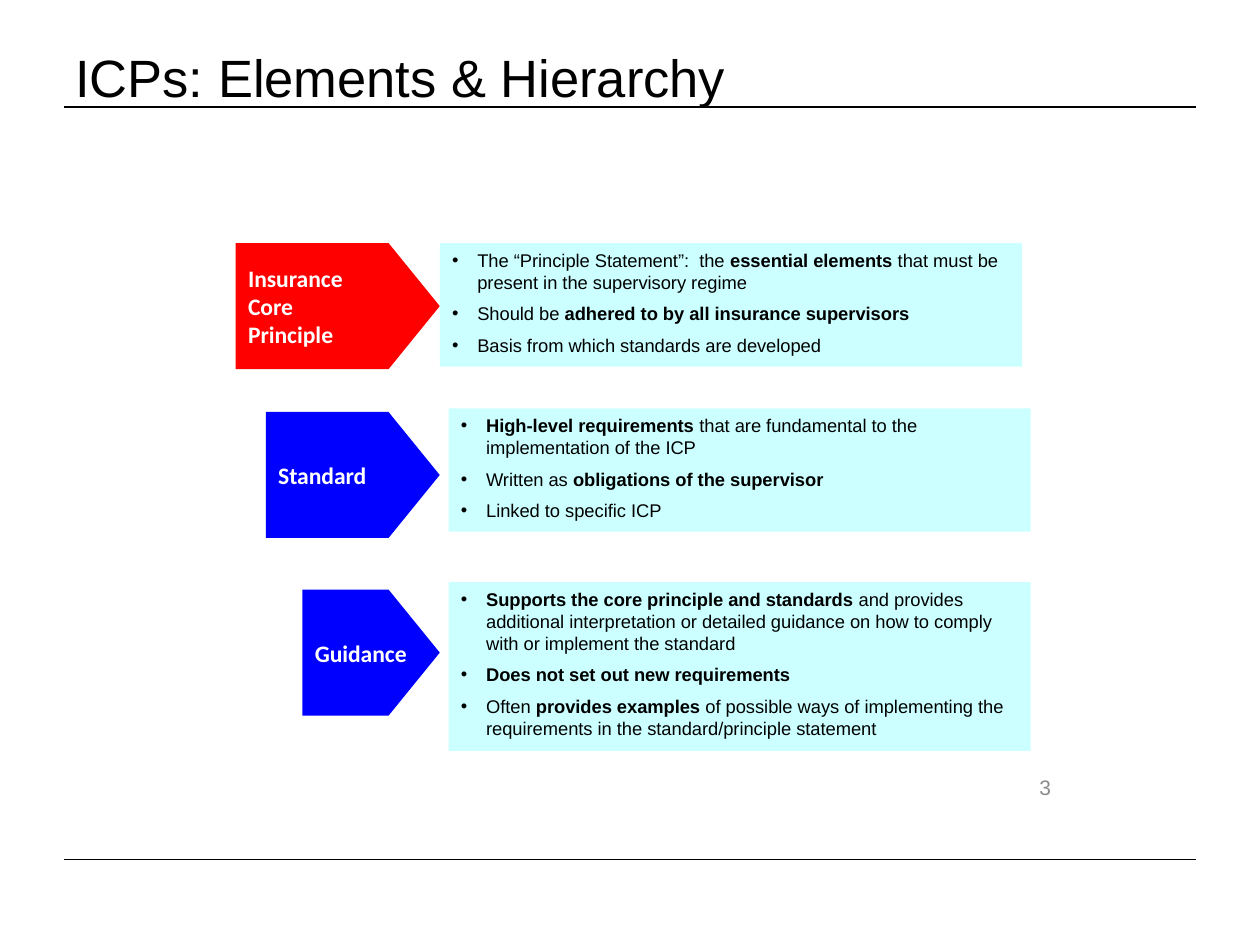
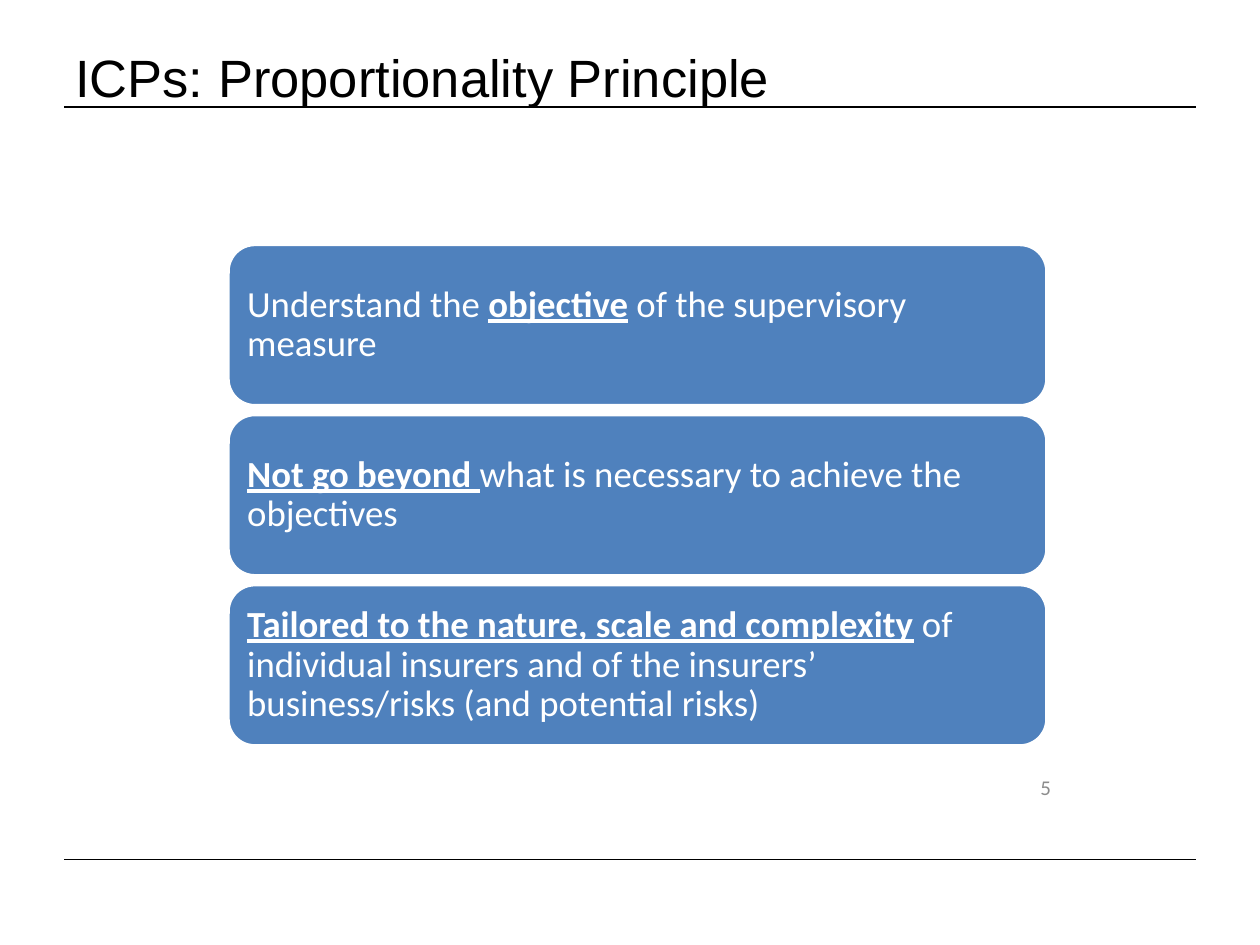
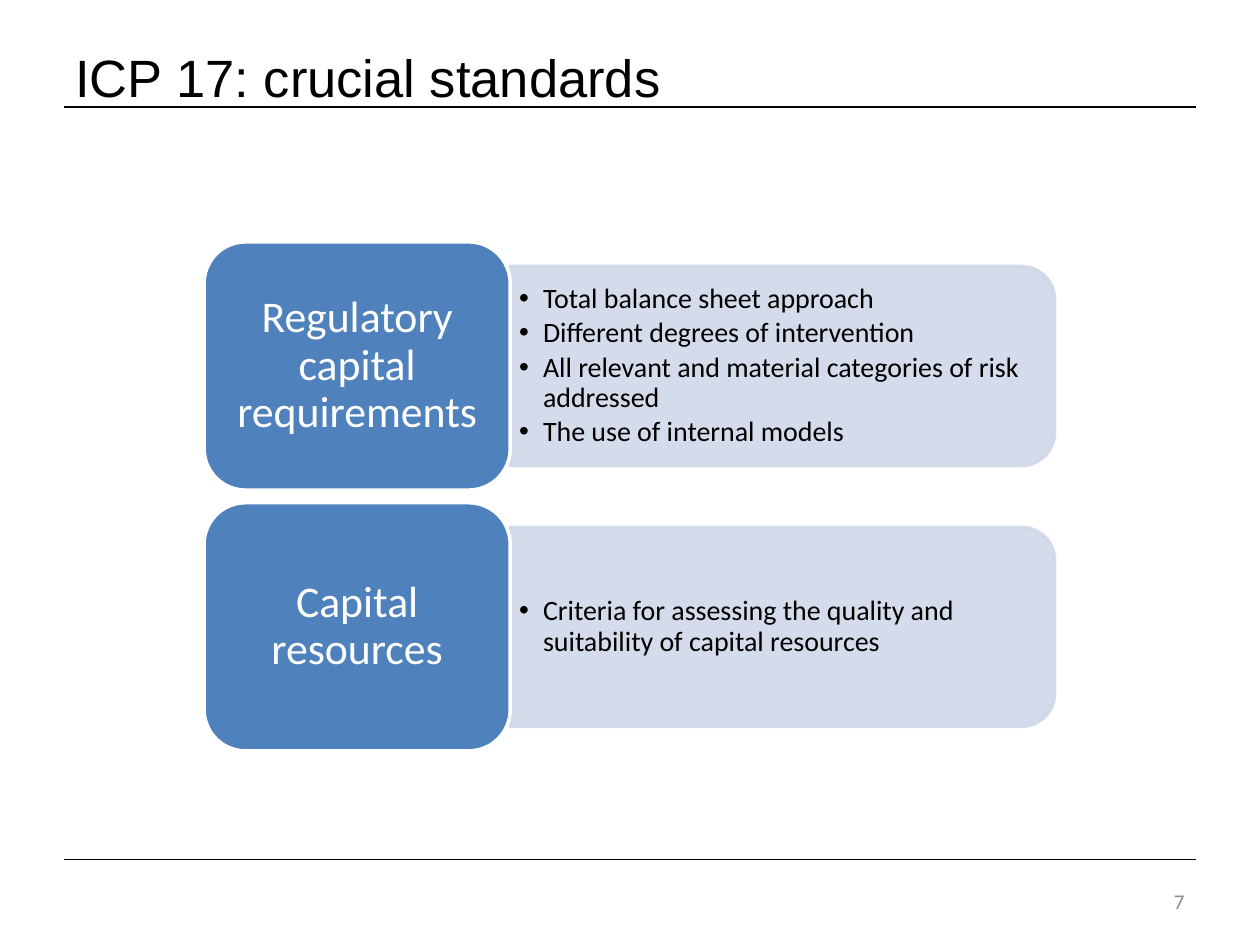
from lxml import etree
from pptx import Presentation
from pptx.dml.color import RGBColor
from pptx.enum.shapes import MSO_CONNECTOR, MSO_SHAPE
from pptx.enum.text import MSO_ANCHOR, PP_ALIGN
from pptx.oxml.ns import qn
from pptx.util import Inches, Pt

TOP, MIDDLE = MSO_ANCHOR.TOP, MSO_ANCHOR.MIDDLE
LEFT, CENTER, RIGHT = PP_ALIGN.LEFT, PP_ALIGN.CENTER, PP_ALIGN.RIGHT
RECTANGLE, PENTAGON = MSO_SHAPE.RECTANGLE, MSO_SHAPE.PENTAGON
ROUNDED = MSO_SHAPE.ROUNDED_RECTANGLE
TWO_ROUNDED = MSO_SHAPE.ROUND_2_SAME_RECTANGLE
STRAIGHT = MSO_CONNECTOR.STRAIGHT

BLACK, WHITE, GREY = "000000", "FFFFFF", "8C8C8C"
RED, BLUE, AQUA = "FF0000", "0000FF", "CCFFFF"
STEEL, MIST = "4F81BD", "D0D8E8"
RULE_TOPS = (0.85, 6.82)
MID_NUMBER, CORNER_NUMBER = (8, 6.06, 0.44, 0.38), (7.17, 6.95, 2.33, 0.4)

# Asterisks enclose the emphasised words.
HIERARCHY = [
    {"level": ["Insurance", "Core", "Principle"], "color": RED,
     "arrow": (1.87, 1.93), "card": (3.49, 1.93, 4.62, 0.98),
     "points": [
         "The “Principle Statement”:  the *essential elements* that must be present in the supervisory regime",
         "Should be *adhered to by all insurance supervisors*",
         "Basis from which standards are developed"]},
    {"level": ["Standard"], "color": BLUE,
     "arrow": (2.11, 3.27), "card": (3.56, 3.24, 4.62, 0.98),
     "points": [
         "*High-level requirements* that are fundamental to the implementation of the ICP",
         "Written as *obligations of the supervisor*",
         "Linked to specific ICP"]},
    {"level": ["Guidance"], "color": BLUE,
     "arrow": (2.4, 4.68), "card": (3.56, 4.62, 4.62, 1.34),
     "points": [
         "*Supports the core principle and standards* and provides additional interpretation or detailed guidance on how to comply with or implement the standard",
         "*Does not set out new requirements*",
         "Often *provides examples* of possible ways of implementing the requirements in the standard/principle statement"]},
]
PROPORTIONALITY = [
    "Understand the *objective* of the supervisory measure",
    "*Not go beyond *what is necessary to achieve the objectives",
    "*Tailored to the nature, scale and complexity* of individual insurers and of the insurers’ business/risks (and potential risks)",
]
STANDARDS = [
    ("Regulatory capital requirements", [
        "Total balance sheet approach",
        "Different degrees of intervention",
        "All relevant and material categories of risk addressed",
        "The use of internal models"]),
    ("Capital resources", [
        "Criteria for assessing the quality and suitability of capital resources"]),
]


def rgb(color):
    return RGBColor.from_string(color)


def add_box(slide, kind, box, fill, line=None):
    shape = slide.shapes.add_shape(kind, *map(Inches, box))
    shape.shadow.inherit = False
    shape.fill.solid()
    shape.fill.fore_color.rgb = rgb(fill)
    if line:
        shape.line.color.rgb = rgb(line)
        shape.line.width = Pt(2)
    else:
        shape.line.fill.background()
    return shape


def add_bullet(paragraph, indent):
    properties = paragraph._p.get_or_add_pPr()
    properties.set("marL", str(Inches(indent)))
    properties.set("indent", str(-Inches(indent)))
    etree.SubElement(properties, qn("a:buFont")).set("typeface", "Arial")
    etree.SubElement(properties, qn("a:buChar")).set("char", "•")


def write(shape, paragraphs, size, font, color, align=LEFT, anchor=MIDDLE, insets=(0.1, 0.05),
          wrap=True, bold=False, underline=False, bullet=None, after=0, spacing=None):
    """Fill a shape with text; underline also applies to emphasised words only."""
    frame = shape.text_frame
    frame.word_wrap = wrap
    frame.vertical_anchor = anchor
    frame.margin_left = frame.margin_right = Inches(insets[0])
    frame.margin_top = frame.margin_bottom = Inches(insets[1])
    for index, text in enumerate(paragraphs):
        paragraph = frame.paragraphs[0] if index == 0 else frame.add_paragraph()
        paragraph.alignment = align
        paragraph.space_after = Pt(after)
        if spacing:
            paragraph.line_spacing = spacing
        if bullet:
            add_bullet(paragraph, bullet)
        for part, words in enumerate(text.split("*")):
            if not words:
                continue
            emphasised = part % 2 == 1
            run = paragraph.add_run()
            run.text = words
            run.font.size, run.font.name = Pt(size), font
            run.font.color.rgb = rgb(color)
            run.font.bold = bold or emphasised
            run.font.underline = underline and emphasised


def add_text(slide, box, paragraphs, *style, **options):
    write(slide.shapes.add_textbox(*map(Inches, box)), paragraphs, *style, **options)


def add_base(deck, title, number, number_box, number_font="Calibri"):
    """Add a slide with its rules, title and page number."""
    slide = deck.slides.add_slide(deck.slide_layouts[6])
    for top in RULE_TOPS:
        rule = slide.shapes.add_connector(
            STRAIGHT, Inches(0.51), Inches(top), Inches(9.49), Inches(top))
        rule.line.color.rgb = rgb(BLACK)
        rule.line.width = Pt(0.75)
        etree.SubElement(rule._element.spPr, qn("a:effectLst"))
    add_text(slide, (0.5, 0.3, 9, 0.61), [title], 30, "Arial", BLACK)
    add_text(slide, number_box, [number], 12, number_font, GREY, align=RIGHT)
    return slide


def build_hierarchy(deck):
    slide = add_base(deck, "ICPs: Elements & Hierarchy", "3", MID_NUMBER, "Arial")
    tip = 3.49
    for row in HIERARCHY:
        left, top = row["arrow"]
        arrow = add_box(slide, PENTAGON, (left, top, tip - left, 1), row["color"])
        arrow.adjustments[0] = 0.406
        write(arrow, row["level"], 13.5, "Calibri", WHITE, wrap=False, bold=True)
        card = add_box(slide, RECTANGLE, row["card"], AQUA)
        write(card, row["points"], 10.5, "Arial", BLACK, anchor=TOP, bullet=0.2, after=5.25)


def build_proportionality(deck):
    slide = add_base(deck, "ICPs: Proportionality Principle", "5", MID_NUMBER)
    for index, rule in enumerate(PROPORTIONALITY):
        bar = add_box(slide, ROUNDED, (1.81, 1.94 + 1.35 * index, 6.5, 1.28), STEEL, WHITE)
        write(bar, [rule], 21, "Calibri", WHITE, insets=(0.09, 0.09), underline=True, spacing=0.9)


def add_panel(slide, left, middle, width, height):
    """Add a translucent panel rounded on its right side."""
    box = (left + (width - height) / 2, middle - width / 2, height, width)
    panel = add_box(slide, TWO_ROUNDED, box, MIST, MIST)
    panel.rotation = 90
    for color in panel._element.spPr.iter(qn("a:srgbClr")):
        etree.SubElement(color, qn("a:alpha")).set("val", "90000")


def build_standards(deck):
    slide = add_base(deck, "ICP 17: crucial standards", "7", CORNER_NUMBER)
    left, width, height = 1.62, 2.43, 1.97
    for index, (standard, points) in enumerate(STANDARDS):
        top = 1.92 + 2.07 * index
        middle = top + height / 2
        add_panel(slide, left + width, middle, 4.32, 1.58)
        add_text(slide, (left + width, middle - 0.71, 4.24, 1.42), points, 16, "Calibri", BLACK,
                 insets=(0.07, 0.03), bullet=0.19, after=2.4, spacing=0.9)
        label = add_box(slide, ROUNDED, (left, top, width, height), STEEL, WHITE)
        write(label, [standard], 25, "Calibri", WHITE, align=CENTER, spacing=0.9)


def main():
    deck = Presentation()
    deck.slide_width, deck.slide_height = Inches(10), Inches(7.5)
    build_hierarchy(deck)
    build_proportionality(deck)
    build_standards(deck)
    deck.save("out.pptx")


if __name__ == "__main__":
    main()
